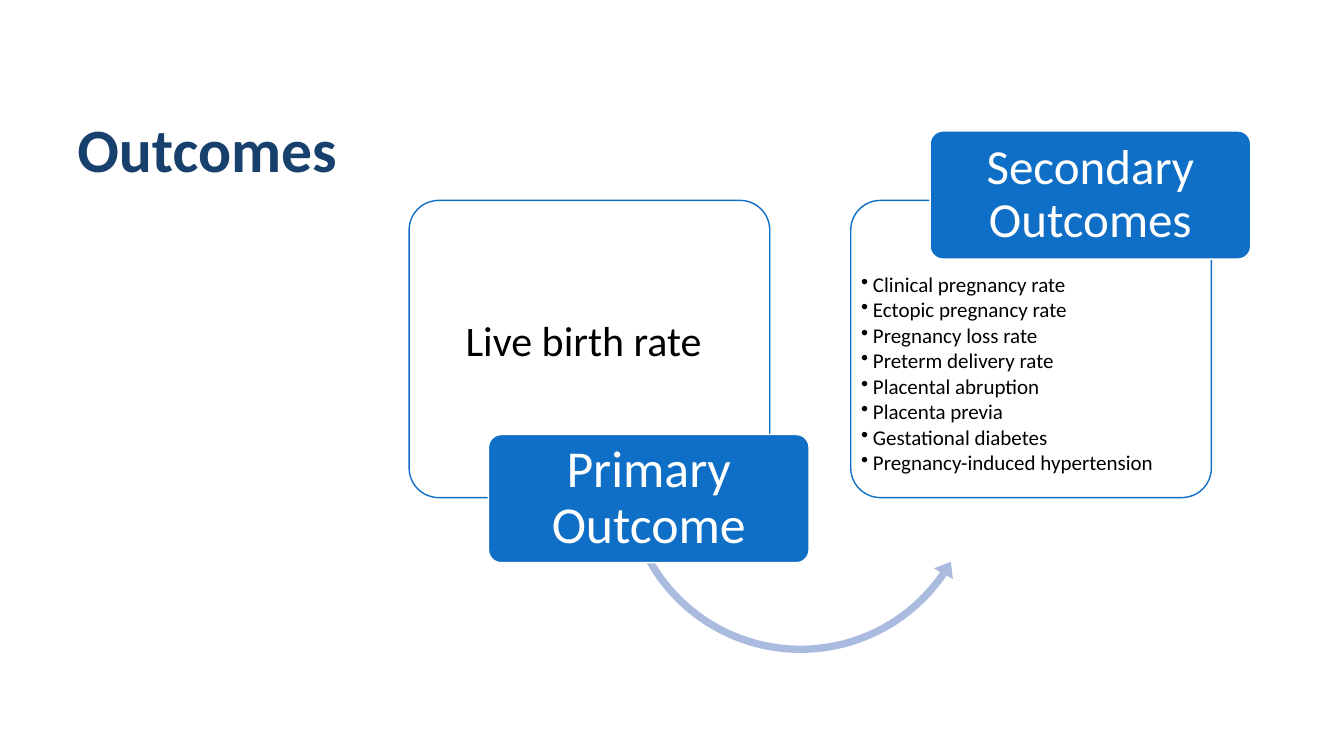
from dataclasses import dataclass

import pptx
import pptx.dml.color
import pptx.enum.shapes
import pptx.enum.text
import pptx.oxml
import pptx.oxml.ns
import pptx.shapes.autoshape
import pptx.slide
import pptx.text.text
import pptx.util

Cm = pptx.util.Cm
Pt = pptx.util.Pt
Shapes = pptx.enum.shapes.MSO_SHAPE
Anchor = pptx.enum.text.MSO_ANCHOR
Align = pptx.enum.text.PP_ALIGN

FONT = "Calibri"
COLORS = {"title": "17406D", "blue": "0F6FC6", "arrow": "ABBBDF",
          "white": "FFFFFF", "black": "000000"}

# Layout in centimetres
CARD_LEFT, CARD_TOP, CARD_PITCH = 10.31, 5.05, 11.13
CARD_SIZE = (9.09, 7.49)
LABEL_SIZE = (8.08, 3.23)
LABEL_SHIFT = 2
BODY_WIDTH = 8.74
BULLET_INDENT = 0.3


@dataclass
class Box:
    left: float
    top: float
    width: float
    height: float

    def lengths(self) -> tuple:
        return Cm(self.left), Cm(self.top), Cm(self.width), Cm(self.height)


@dataclass
class TextStyle:
    size: float
    color: str
    align: Align = Align.LEFT
    anchor: Anchor = Anchor.MIDDLE
    insets: tuple = (0.08, 0.08)
    bold: bool = False
    bullets: bool = False
    space_after: float = 0


@dataclass
class Outcome:
    label: str
    label_size: float
    label_top: float
    body: str
    body_box: Box
    body_style: TextStyle


OUTCOMES = [
    Outcome("Primary Outcome", 37, 10.95, "Live birth rate",
            Box(10.34, 6.5, BODY_WIDTH, 4.27),
            TextStyle(30, "black", Align.CENTER)),
    Outcome("Secondary Outcomes", 35, 3.3,
            "Clinical pregnancy rate\nEctopic pregnancy rate\n"
            "Pregnancy loss rate\nPreterm delivery rate\n"
            "Placental abruption\nPlacenta previa\n"
            "Gestational diabetes\nPregnancy-induced hypertension",
            Box(21.62, 6.83, BODY_WIDTH, 5.54),
            TextStyle(15, "black", anchor=Anchor.TOP, bullets=True, space_after=2)),
]


def rgb(name: str) -> pptx.dml.color.RGBColor:
    return pptx.dml.color.RGBColor.from_string(COLORS[name])


def add_bullet(paragraph: pptx.text.text._Paragraph) -> None:
    properties = paragraph._p.get_or_add_pPr()
    properties.set("marL", str(Cm(BULLET_INDENT)))
    properties.set("indent", str(-Cm(BULLET_INDENT)))
    namespace = pptx.oxml.ns.nsdecls("a")
    properties.append(pptx.oxml.parse_xml(f'<a:buChar {namespace} char="•"/>'))


def write_text(text_frame: pptx.text.text.TextFrame, text: str, style: TextStyle) -> None:
    text_frame.word_wrap = True
    text_frame.vertical_anchor = style.anchor
    horizontal, vertical = style.insets
    text_frame.margin_left = text_frame.margin_right = Cm(horizontal)
    text_frame.margin_top = text_frame.margin_bottom = Cm(vertical)
    text_frame.text = text
    for paragraph in text_frame.paragraphs:
        if style.bullets:
            add_bullet(paragraph)
        paragraph.alignment = style.align
        paragraph.line_spacing = 0.9
        paragraph.space_after = Pt(style.space_after)
        for run in paragraph.runs:
            run.font.name = FONT
            run.font.size = Pt(style.size)
            run.font.bold = style.bold
            run.font.color.rgb = rgb(style.color)


def add_text(slide: pptx.slide.Slide, box: Box, text: str, style: TextStyle) -> None:
    write_text(slide.shapes.add_textbox(*box.lengths()).text_frame, text, style)


def add_shape(slide: pptx.slide.Slide, kind: Shapes, box: Box, adjustments: list[float],
              fill: str, line: str | None = None) -> pptx.shapes.autoshape.Shape:
    shape = slide.shapes.add_shape(kind, *box.lengths())
    shape.shadow.inherit = False
    for index, value in enumerate(adjustments):
        shape.adjustments[index] = value
    shape.fill.solid()
    shape.fill.fore_color.rgb = rgb(fill)
    if line:
        shape.line.color.rgb = rgb(line)
        shape.line.width = Pt(1)
    else:
        shape.line.fill.background()
    return shape


def add_arrow(slide: pptx.slide.Slide) -> None:
    add_shape(slide, Shapes.LEFT_CIRCULAR_ARROW, Box(15.54, 7.37, 9.27, 9.27),
              [0.02, 2.81, 20.57, 90.25, 0.03], "arrow")


def add_outcome(slide: pptx.slide.Slide, outcome: Outcome, card_left: float) -> None:
    card = Box(card_left, CARD_TOP, *CARD_SIZE)
    add_shape(slide, Shapes.ROUNDED_RECTANGLE, card, [0.1], "white", "blue")
    add_text(slide, outcome.body_box, outcome.body, outcome.body_style)
    label_box = Box(card_left + LABEL_SHIFT, outcome.label_top, *LABEL_SIZE)
    label = add_shape(slide, Shapes.ROUNDED_RECTANGLE, label_box, [0.1], "blue", "white")
    write_text(label.text_frame, outcome.label,
               TextStyle(outcome.label_size, "white", Align.CENTER, insets=(0.2, 0.13)))


def main() -> None:
    presentation = pptx.Presentation()
    presentation.slide_width, presentation.slide_height = Cm(33.87), Cm(19.05)
    slide = presentation.slides.add_slide(presentation.slide_layouts[6])

    # Title
    add_text(slide, Box(1.7, 2.31, 30.48, 3.05), "Outcomes",
             TextStyle(44, "title", insets=(0.25, 0.13), bold=True))

    # Arrow behind the outcome cards
    add_arrow(slide)
    for index, outcome in enumerate(OUTCOMES):
        add_outcome(slide, outcome, CARD_LEFT + index * CARD_PITCH)

    presentation.save("out.pptx")


if __name__ == "__main__":
    main()
